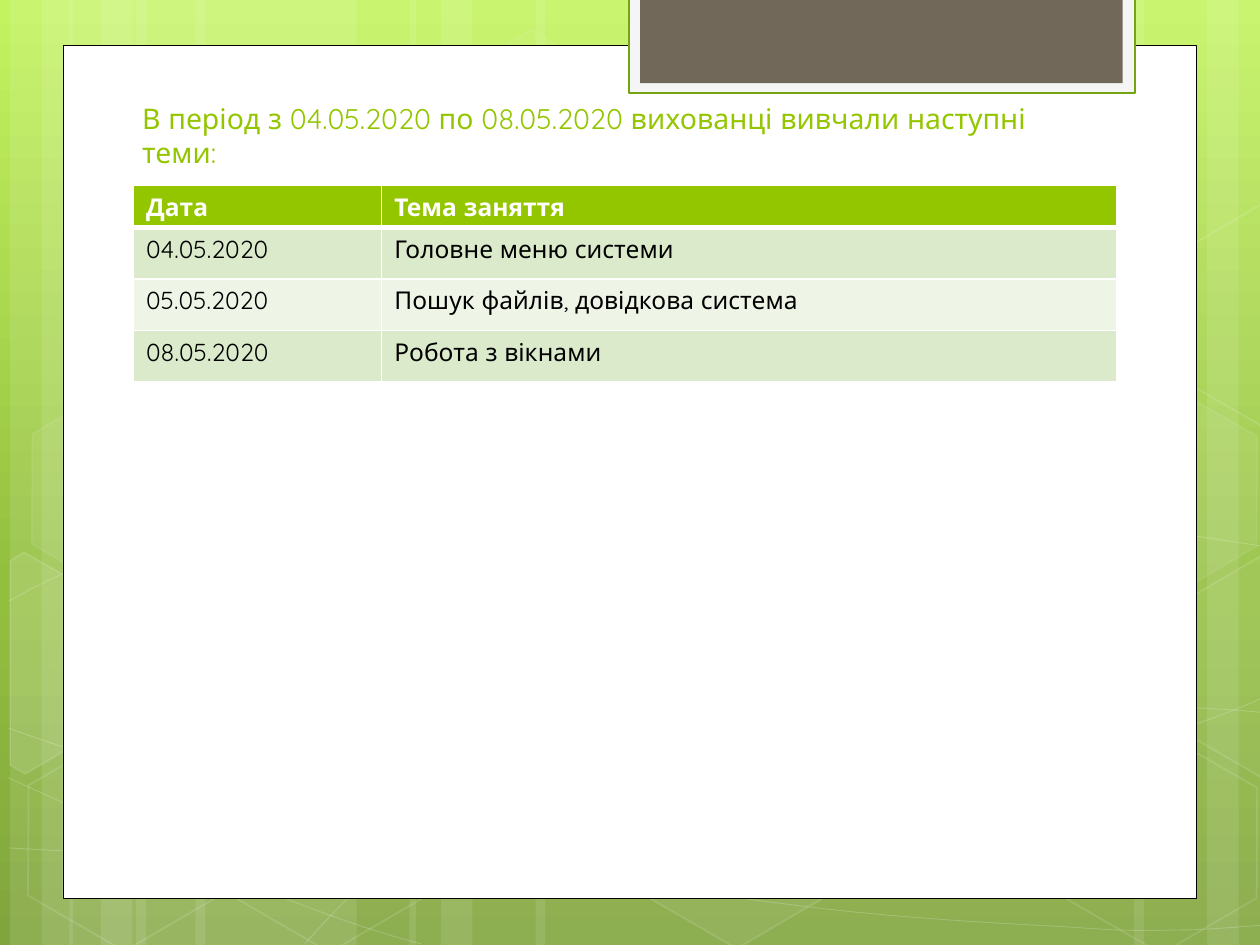
from copy import deepcopy
from math import cos, radians, sin

from lxml.etree import SubElement
from pptx import Presentation
from pptx.dml.color import RGBColor
from pptx.enum.shapes import MSO_SHAPE as Preset
from pptx.enum.text import MSO_ANCHOR as Anchor
from pptx.oxml import parse_xml
from pptx.oxml.ns import nsdecls, qn
from pptx.util import Inches, Pt

WIDTH, HEIGHT = 10, 7.5
TILT = 30
FONT = "Quicksand"
WHITE, BLACK, GREEN = "FFFFFF", "000000", "94C600"
ROW_FILLS = [GREEN, "DCEACC", "EEF5E7", "DCEACC"]
TITLE = "В період з 04.05.2020 по 08.05.2020 вихованці вивчали наступні теми:"
LESSONS = [
    ("Дата", "Тема заняття"),
    ("04.05.2020", "Головне меню системи"),
    ("05.05.2020", "Пошук файлів, довідкова система"),
    ("08.05.2020", "Робота з вікнами"),
]
BAND_TRIO = [(1.08, 1.75), (0.08, 0.5), (0.33, 0.83)]
BANDS = BAND_TRIO + [(left + 0.47, width) for left, width in BAND_TRIO]
RIGHT_BANDS = [(7.33, 1.75), (9.58, 0.5), (9, 0.83)]
MIDDLE_BANDS = [(4.25, 3.08), (3.25, 0.5), (3.5, 0.83)]
CURVES = [
    [(0.07, 6.73), (0.61, 6.76), (1.15, 6.79), (1.9, 6.78), (2.65, 6.77), (3.58, 6.75),
     (4.58, 6.65), (5.58, 6.55), (7, 6.36), (7.92, 6.17), (8.83, 5.98), (9.77, 5.68),
     (10.07, 5.51)],
    [(0.07, 4.77), (0.36, 4.61), (0.65, 4.46), (1.21, 4.31), (1.78, 4.16), (2.59, 3.94),
     (3.47, 3.87), (4.36, 3.8), (5.44, 3.79), (6.54, 3.87), (7.64, 3.95), (9.47, 4.26),
     (10.07, 4.34)],
    [(0.06, 6.17), (1.27, 6.72), (2.47, 7.27), (3.34, 7.49)],
    [(0.07, 5.78), (0.38, 5.89), (0.7, 6), (1.28, 6.16), (1.86, 6.31), (2.73, 6.56),
     (3.57, 6.73), (4.4, 6.9), (5.45, 7.08), (6.28, 7.18), (7.11, 7.29), (8, 7.33),
     (8.53, 7.36), (9.05, 7.4), (9.19, 7.38), (9.45, 7.38), (9.71, 7.37), (9.89, 7.35),
     (10.07, 7.34)],
    [(2.42, 7.49), (2.6, 7.29), (2.78, 7.09), (3.02, 6.91), (3.26, 6.73), (3.6, 6.53),
     (3.88, 6.39), (4.16, 6.25), (4.33, 6.19), (4.7, 6.09), (5.06, 5.99), (5.73, 5.85),
     (6.08, 5.78), (6.44, 5.71), (6.49, 5.71), (6.8, 5.69), (7.11, 5.66), (7.6, 5.63),
     (7.94, 5.62), (8.29, 5.61), (8.86, 5.62), (8.86, 5.62), (9.08, 5.62), (9.31, 5.62),
     (9.53, 5.62), (9.71, 5.63), (9.88, 5.64), (9.97, 5.65), (10.06, 5.66),
     (10.03, 5.65), (10.06, 5.66)],
]
HEXAGONS = [
    (3.34, 0.36, 4, 8), (4.97, 5.89, 6, 12), (0.11, 5.91, None, 12), (0.14, 3.12, 7, 8),
    (1.74, 5.92, None, 12), (7.53, 4.53, 10, 12), (8.34, 5.93, None, 12),
    (8.34, 3.14, 7, 8)]
LEFT_CUT = [(0.08, 4.45), (0.19, 4.38), (0.96, 4.82), (0.95, 5.7), (0.2, 6.14), (0.08, 6.07)]
RIGHT_CUT = [(9.26, 4.85), (10.01, 4.41), (10.09, 4.46), (10.09, 6.13), (10.02, 6.17),
             (9.26, 5.73)]
CUT_HEXAGONS = [
    (LEFT_CUT, (0.36, 5.35), 10), (RIGHT_CUT, (9.85, 5.2), 4),
    ([(x, y - 2.79) for x, y in RIGHT_CUT], (9.85, 2.41), None)]


def color(value):
    """Turn a hex string into a colour."""
    return RGBColor.from_string(value)


def set_alpha(element, percent):
    """Make every colour inside an element partly transparent."""
    for node in element.iter(qn("a:srgbClr")):
        SubElement(node, qn("a:alpha")).set("val", str(percent * 1000))


def paint(shape, fill=None, line=None, weight=1, fill_alpha=None, line_alpha=None):
    """Give a shape its fill and outline, without a shadow."""
    shape.shadow.inherit = False
    if fill:
        shape.fill.solid()
        shape.fill.fore_color.rgb = color(fill)
        if fill_alpha:
            set_alpha(shape._element.spPr.find(qn("a:solidFill")), fill_alpha)
    else:
        shape.fill.background()
    if line:
        shape.line.color.rgb = color(line)
        shape.line.width = Pt(weight)
        if line_alpha:
            set_alpha(shape._element.spPr.find(qn("a:ln")), line_alpha)
    else:
        shape.line.fill.background()


def add_preset(slide, preset, box, rotation=0, **style):
    """Add a painted preset shape in a box given in inches."""
    shape = slide.shapes.add_shape(preset, *map(Inches, box))
    shape.rotation = rotation
    paint(shape, **style)
    return shape


def add_outline(slide, points, close=False, **style):
    """Add a painted freeform through points given in inches."""
    start, *others = [(Inches(x), Inches(y)) for x, y in points]
    builder = slide.shapes.build_freeform(*start)
    builder.add_line_segments(others, close=close)
    shape = builder.convert_to_shape()
    paint(shape, **style)
    return shape


def bend(shape):
    """Turn each three line segments of a freeform into one cubic curve."""
    segments = list(shape._element.iter(qn("a:lnTo")))
    for first in range(0, len(segments), 3):
        trio = segments[first:first + 3]
        curve = SubElement(trio[0].getparent(), qn("a:cubicBezTo"))
        for segment in trio:
            curve.append(segment[0])
            segment.getparent().remove(segment)


def untilt(point, center):
    """Turn a point back by the tilt angle around a center."""
    x, y = point[0] - center[0], point[1] - center[1]
    cosine, sine = cos(radians(TILT)), sin(radians(TILT))
    return center[0] + x * cosine + y * sine, center[1] - x * sine + y * cosine


def write_text(frame, text, size=14, ink=BLACK, bold=False):
    """Write one formatted paragraph into a text frame."""
    run = frame.paragraphs[0].add_run()
    run.text = text
    run.font.name, run.font.size, run.font.bold = FONT, Pt(size), bold
    run.font.color.rgb = color(ink)


def paint_background(slide):
    """Fill the slide with a vertical three-step green gradient."""
    fill = slide.background.fill
    fill.gradient()
    fill.gradient_angle = 270
    stop_list = next(slide._element.iter(qn("a:gsLst")))
    stop_list.append(deepcopy(stop_list[-1]))
    steps = [(0, "C3F35F"), (0.62, "93BF3F"), (1, "81A53E")]
    for stop, (position, value) in zip(fill.gradient_stops, steps):
        stop.position = position
        stop.color.rgb = color(value)


def add_decoration(slide):
    """Add the translucent bands, curves and hexagons."""
    for bands, rotation in ((BANDS, 0), (RIGHT_BANDS, 180), (MIDDLE_BANDS, 0)):
        for left, width in bands:
            add_preset(slide, Preset.RECTANGLE, (left, 0, width, HEIGHT), rotation,
                       fill=WHITE, fill_alpha=10)
    for controls in CURVES:
        bend(add_outline(slide, controls, line=WHITE, weight=0.5, line_alpha=20))
    for left, top, fill_alpha, line_alpha in HEXAGONS:
        hexagon = add_preset(slide, Preset.HEXAGON, (left, top, 1.75, 1.52), TILT,
                             fill=WHITE if fill_alpha else None, fill_alpha=fill_alpha,
                             line=WHITE, line_alpha=line_alpha)
        hexagon.adjustments[0], hexagon.adjustments[1] = 0.285, 1.155
    for points, center, fill_alpha in CUT_HEXAGONS:
        upright = [untilt(point, center) for point in points]
        cut = add_outline(slide, upright, True, fill=WHITE if fill_alpha else None,
                          fill_alpha=fill_alpha, line=WHITE, line_alpha=12)
        cut.rotation = TILT


def add_panel(slide):
    """Add the white page and the framed tab at its top."""
    add_preset(slide, Preset.RECTANGLE, (0.5, 0.36, WIDTH - 1, 6.77),
               fill=WHITE, line=BLACK, weight=0.5)
    add_preset(slide, Preset.RECTANGLE, (4.99, -0.02, 4.02, 0.76),
               fill="F5F5F5", line="74A510", weight=1.25)
    add_preset(slide, Preset.RECTANGLE, (5.08, -0.02, 3.83, 0.68), fill="71685A")


def add_title(slide):
    """Add the heading above the table."""
    frame = slide.shapes.add_textbox(*map(Inches, (1.03, 0.72, 7.68, 0.67))).text_frame
    frame.word_wrap = True
    frame.vertical_anchor = Anchor.BOTTOM
    write_text(frame, TITLE, size=16.2, ink=GREEN)


def add_borders(cell, bottom):
    """Draw white cell borders with a chosen bottom weight."""
    for side, weight in (("L", 1), ("R", 1), ("T", 1), ("B", bottom)):
        cell._tc.get_or_add_tcPr().append(parse_xml(
            f'<a:ln{side} {nsdecls("a")} w="{Pt(weight)}"><a:solidFill>'
            f'<a:srgbClr val="{WHITE}"/></a:solidFill></a:ln{side}>'))


def add_lessons(slide):
    """Add the table of dates and lesson topics."""
    box = map(Inches, (1.06, 1.47, 7.8, 1.55))
    table = slide.shapes.add_table(len(LESSONS), 2, *box).table
    for column, width in zip(table.columns, (1.97, 5.83)):
        column.width = Inches(width)
    for index, (row, texts) in enumerate(zip(table.rows, LESSONS)):
        header = index == 0
        row.height = Inches(0.31 if header else 0.41)
        for cell, text in zip(row.cells, texts):
            add_borders(cell, bottom=3 if header else 1)
            cell.fill.solid()
            cell.fill.fore_color.rgb = color(ROW_FILLS[index])
            write_text(cell.text_frame, text, ink=WHITE if header else BLACK, bold=header)


def main():
    """Build the slide and save it."""
    presentation = Presentation()
    presentation.slide_width, presentation.slide_height = Inches(WIDTH), Inches(HEIGHT)
    slide = presentation.slides.add_slide(presentation.slide_layouts[6])
    paint_background(slide)
    add_decoration(slide)
    add_panel(slide)
    add_title(slide)
    add_lessons(slide)
    presentation.save("out.pptx")


if __name__ == "__main__":
    main()
